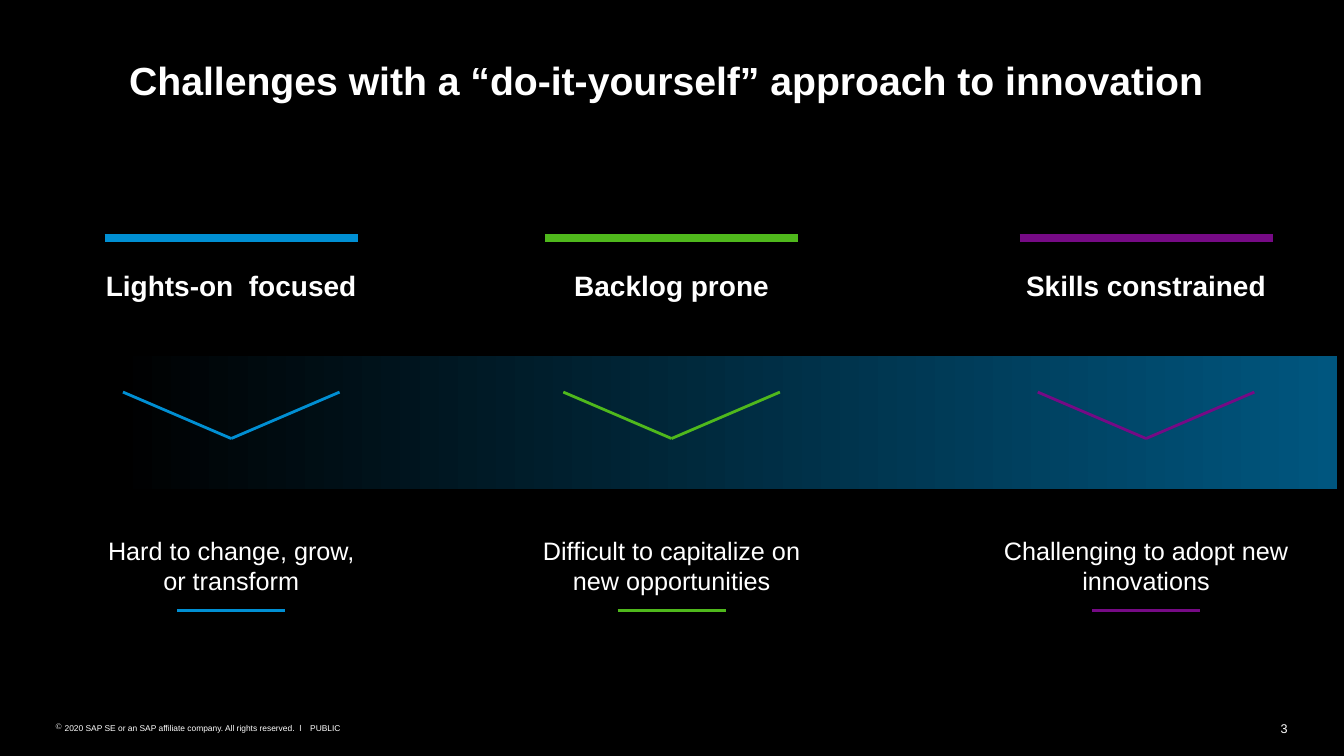
import pptx
import pptx.util
import pptx.dml.color
import pptx.enum.shapes
import pptx.enum.text
import pptx.oxml
import pptx.oxml.ns
import lxml.etree

Cm = pptx.util.Cm
Align = pptx.enum.text.PP_ALIGN
WHITE = "FFFFFF"
BLACK = "000000"

CHALLENGES = [
    (5.83, "008FD3", "Lights-on  focused", "Hard to change, grow, or transform", 6.76),
    (16.93, "4FB81C", "Backlog prone", "Difficult to capitalize on new opportunities", 6.7),
    (28.89, "760A85", "Skills constrained", "Challenging to adopt new innovations", 7.3),
]


def paint(color, hex_value):
    color.rgb = pptx.dml.color.RGBColor.from_string(hex_value)


def write(holder, text, size, align, bold=False, wrap=True):
    frame = holder.text_frame
    frame.margin_left = frame.margin_right = 0
    frame.margin_top = frame.margin_bottom = 0
    frame.word_wrap = wrap
    frame.auto_size = pptx.enum.text.MSO_AUTO_SIZE.NONE
    frame.text = text
    paragraph = frame.paragraphs[0]
    paragraph.alignment = align
    for run in paragraph.runs:
        run.font.name = "Arial"
        run.font.size = pptx.util.Pt(size)
        run.font.bold = bold
        paint(run.font.color, WHITE)
    return paragraph


def add_label(shapes, left, top, width, height, text, size, align, bold=False, wrap=True):
    label = shapes.add_textbox(Cm(left), Cm(top), Cm(width), Cm(height))
    return write(label, text, size, align, bold, wrap)


def add_line(shapes, start, end, hex_value, weight):
    line = shapes.add_connector(
        pptx.enum.shapes.MSO_CONNECTOR.STRAIGHT,
        Cm(start[0]), Cm(start[1]), Cm(end[0]), Cm(end[1]))
    paint(line.line.color, hex_value)
    line.line.width = pptx.util.Pt(weight)
    lxml.etree.SubElement(line._element.spPr, pptx.oxml.ns.qn("a:effectLst"))


def add_bullet(paragraph, symbol, indent):
    properties = paragraph._p.get_or_add_pPr()
    properties.set("marL", str(Cm(indent)))
    properties.set("indent", str(-Cm(indent)))
    bullet = lxml.etree.SubElement(properties, pptx.oxml.ns.qn("a:buChar"))
    bullet.set("char", symbol)


def add_band(shapes):
    band = shapes.add_shape(
        pptx.enum.shapes.MSO_SHAPE.RECTANGLE, Cm(-0.18), Cm(8.96), Cm(33.88), Cm(3.36))
    band.shadow.inherit = False
    band.line.fill.background()
    band.fill.gradient()
    band.fill.gradient_angle = 0
    for stop, position, hex_value in zip(band.fill.gradient_stops, (0.09, 1), (BLACK, "00567F")):
        stop.position = position
        paint(stop.color, hex_value)


def add_challenge(slide, center, hex_value, heading, detail, detail_width):
    column = slide.shapes.add_group_shape().shapes
    add_label(column, center - detail_width / 2, 13.49, detail_width, 1.55,
              detail, 18, Align.CENTER)
    add_label(column, center - 3.19, 6.76, 6.38, 0.86,
              heading, 20, Align.CENTER, bold=True, wrap=False)
    for side in (-1, 1):
        add_line(column, (center + side * 2.73, 9.88), (center, 11.05), hex_value, 2)
    for half_width, top, weight in ((1.36, 15.39, 2), (3.19, 5.99, 6)):
        add_line(column, (center - half_width, top), (center + half_width, top),
                 hex_value, weight)


def add_title(slide, text):
    title = slide.shapes.title
    title.left, title.top, title.width, title.height = Cm(1.4), Cm(1.4), Cm(31.06), Cm(1.2)
    write(title, text, 28, Align.CENTER, bold=True)
    title.text_frame.vertical_anchor = pptx.enum.text.MSO_ANCHOR.MIDDLE


def add_footer(shapes):
    add_label(shapes, 32.08, 18.16, 0.38, 0.38, "3", 9, Align.RIGHT, wrap=False)
    add_label(shapes, 7.82, 18.21, 0.79, 0.25, "PUBLIC", 6, Align.LEFT, wrap=False)
    copyright_line = add_label(
        shapes, 1.4, 18.21, 6.3, 0.25,
        "2020 SAP SE or an SAP affiliate company. All rights reserved.  ǀ", 6, Align.LEFT)
    add_bullet(copyright_line, "©", 0.23)


def main():
    presentation = pptx.Presentation()
    presentation.slide_width = Cm(33.88)
    presentation.slide_height = Cm(19.05)
    slide = presentation.slides.add_slide(presentation.slide_layouts[5])
    slide.background.fill.solid()
    paint(slide.background.fill.fore_color, BLACK)
    add_footer(slide.shapes)
    add_band(slide.shapes)
    add_title(slide, "Challenges with a “do-it-yourself” approach to innovation ")
    for challenge in CHALLENGES:
        add_challenge(slide, *challenge)
    presentation.save("out.pptx")


if __name__ == "__main__":
    main()
